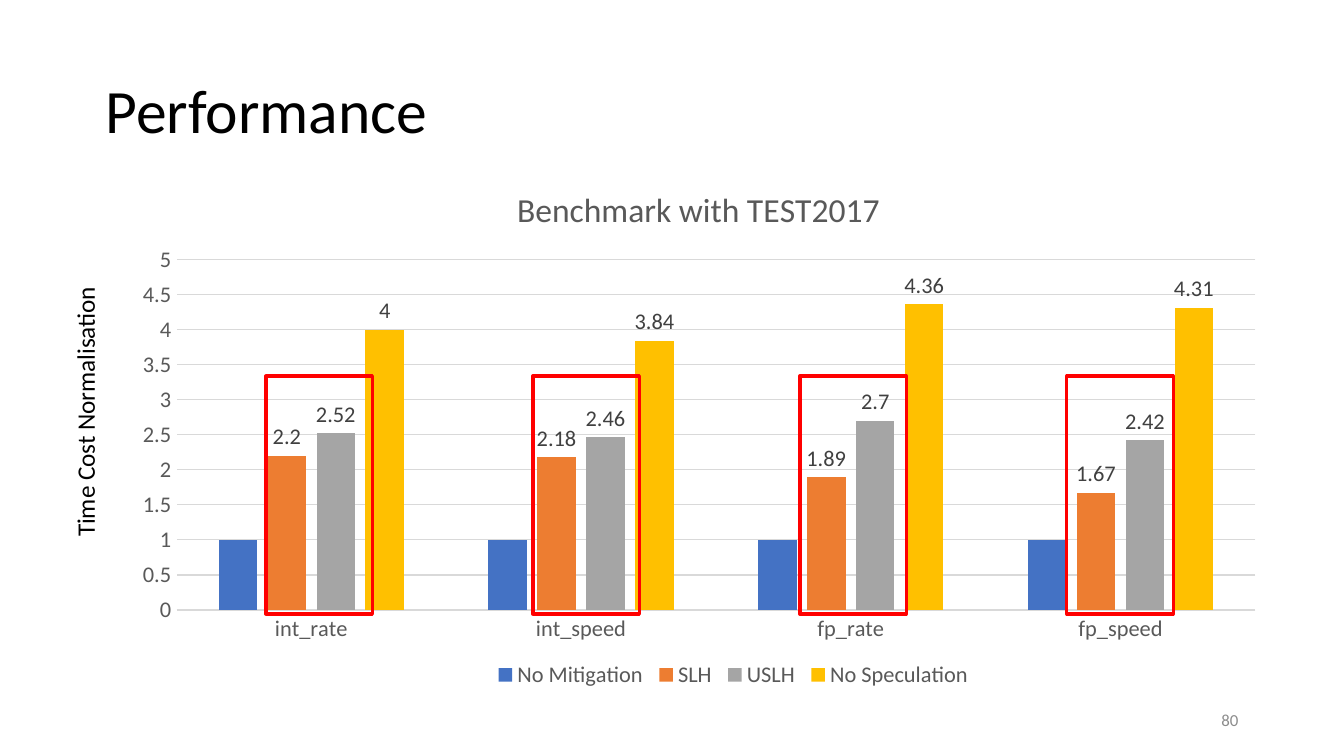
from lxml.etree import SubElement
from pptx import Presentation
from pptx.chart.data import CategoryChartData
from pptx.dml.color import RGBColor
from pptx.enum.chart import XL_CHART_TYPE, XL_LABEL_POSITION, XL_LEGEND_POSITION, XL_TICK_MARK
from pptx.enum.shapes import MSO_SHAPE
from pptx.enum.text import MSO_ANCHOR, PP_ALIGN
from pptx.oxml import parse_xml
from pptx.oxml.ns import nsdecls, qn
from pptx.util import Pt


def style_font(font, size, color):
    values = {"name": "Calibri", "size": Pt(size), "bold": False}
    for name, value in values.items():
        setattr(font, name, value)
    font.color.rgb = RGBColor.from_string(color)


def place_in_chart(element, index, fractions, inner=False):
    for old_layout in element.findall(qn("c:layout")):
        element.remove(old_layout)
    layout = parse_xml(f"<c:layout {nsdecls('c')}><c:manualLayout/></c:layout>")
    settings = {"layoutTarget": "inner"} if inner else {}
    settings.update(xMode="edge", yMode="edge", **fractions)
    for name, value in settings.items():
        SubElement(layout[0], qn(f"c:{name}")).set("val", str(value))
    element.insert(index, layout)


presentation = Presentation()
presentation.slide_width = Pt(720)
presentation.slide_height = Pt(405)
slide = presentation.slides.add_slide(presentation.slide_layouts[5])

title = slide.shapes.title
title_box = {"left": 49.5, "top": 21.5, "width": 621, "height": 78.5}
for name, value in title_box.items():
    setattr(title, name, Pt(value))
title.text_frame.text = "Performance"
title.text_frame.vertical_anchor = MSO_ANCHOR.MIDDLE
paragraph = title.text_frame.paragraphs[0]
paragraph.alignment = PP_ALIGN.LEFT
paragraph.line_spacing = 0.9
style_font(paragraph.runs[0].font, 33, "000000")

page_number = slide.shapes.add_textbox(Pt(508.5), Pt(375), Pt(162), Pt(21.5))
page_number.text_frame.word_wrap = True
page_number.text_frame.vertical_anchor = MSO_ANCHOR.MIDDLE
paragraph = page_number.text_frame.paragraphs[0]
paragraph.text = "80"
paragraph.alignment = PP_ALIGN.RIGHT
style_font(paragraph.runs[0].font, 9, "8C8C8C")

series_values = {
    "No Mitigation": (1, 1, 1, 1),
    "SLH": (2.2, 2.18, 1.89, 1.67),
    "USLH": (2.52, 2.46, 2.7, 2.42),
    "No Speculation": (4, 3.84, 4.36, 4.31),
}
series_colors = ["4472C4", "ED7D31", "A5A5A5", "FFC000"]
chart_data = CategoryChartData()
chart_data.categories = ["int_rate", "int_speed", "fp_rate", "fp_speed"]
for name, values in series_values.items():
    chart_data.add_series(name, values)
chart = slide.shapes.add_chart(
    XL_CHART_TYPE.COLUMN_CLUSTERED, Pt(63.5), Pt(87), Pt(621.5), Pt(289), chart_data
).chart
style_font(chart.font, 10, "000000")

chart.has_title = True
chart.chart_title.include_in_layout = False
chart.chart_title.text_frame.text = "Benchmark with TEST2017"
style_font(chart.chart_title.text_frame.paragraphs[0].runs[0].font, 18, "595959")

chart.has_legend = True
chart.legend.position = XL_LEGEND_POSITION.BOTTOM
chart.legend.include_in_layout = False
style_font(chart.legend.font, 12, "595959")

for axis in (chart.category_axis, chart.value_axis):
    axis.major_tick_mark = XL_TICK_MARK.NONE
    axis.minor_tick_mark = XL_TICK_MARK.NONE
    style_font(axis.tick_labels.font, 12, "595959")
chart.value_axis.minimum_scale = 0
chart.value_axis.maximum_scale = 5
chart.value_axis.major_unit = 0.5
chart.value_axis.format.line.fill.background()
for line in (chart.category_axis.format.line, chart.value_axis.major_gridlines.format.line):
    line.color.rgb = RGBColor.from_string("D9D9D9")
    line.width = Pt(0.75)

plot = chart.plots[0]
plot.gap_width = 219
plot.overlap = -27
plot.vary_by_categories = False
for series, color in zip(plot.series, series_colors):
    series.format.fill.solid()
    series.format.fill.fore_color.rgb = RGBColor.from_string(color)
    if series.name != "No Mitigation":
        labels = series.data_labels
        labels.show_value = True
        labels.position = XL_LABEL_POSITION.OUTSIDE_END
        style_font(labels.font, 12, "404040")

plot_area = chart.plots._plotArea if hasattr(chart.plots, "_plotArea") else chart.element.find(".//" + qn("c:plotArea"))
place_in_chart(plot_area, 0, {"x": 0.05, "y": 0.18, "w": 0.93, "h": 0.65}, inner=True)
legend = chart.element.find(".//" + qn("c:legend"))
place_in_chart(legend, 1, {"x": 0.32, "y": 0.91, "w": 0.42, "h": 0.08})

axis_label = slide.shapes.add_textbox(Pt(-29.5), Pt(207.5), Pt(150.5), Pt(24))
axis_label.rotation = 270
axis_label.text_frame.word_wrap = False
paragraph = axis_label.text_frame.paragraphs[0]
paragraph.text = "Time Cost Normalisation"
style_font(paragraph.runs[0].font, 13.5, "000000")

for column in range(4):
    highlight = slide.shapes.add_shape(
        MSO_SHAPE.RECTANGLE, Pt(142.5 + 143 * column), Pt(201.5), Pt(57), Pt(127.5)
    )
    highlight.shadow.inherit = False
    highlight.fill.background()
    highlight.line.color.rgb = RGBColor.from_string("FF0000")
    highlight.line.width = Pt(1.75)

presentation.save("out.pptx")
